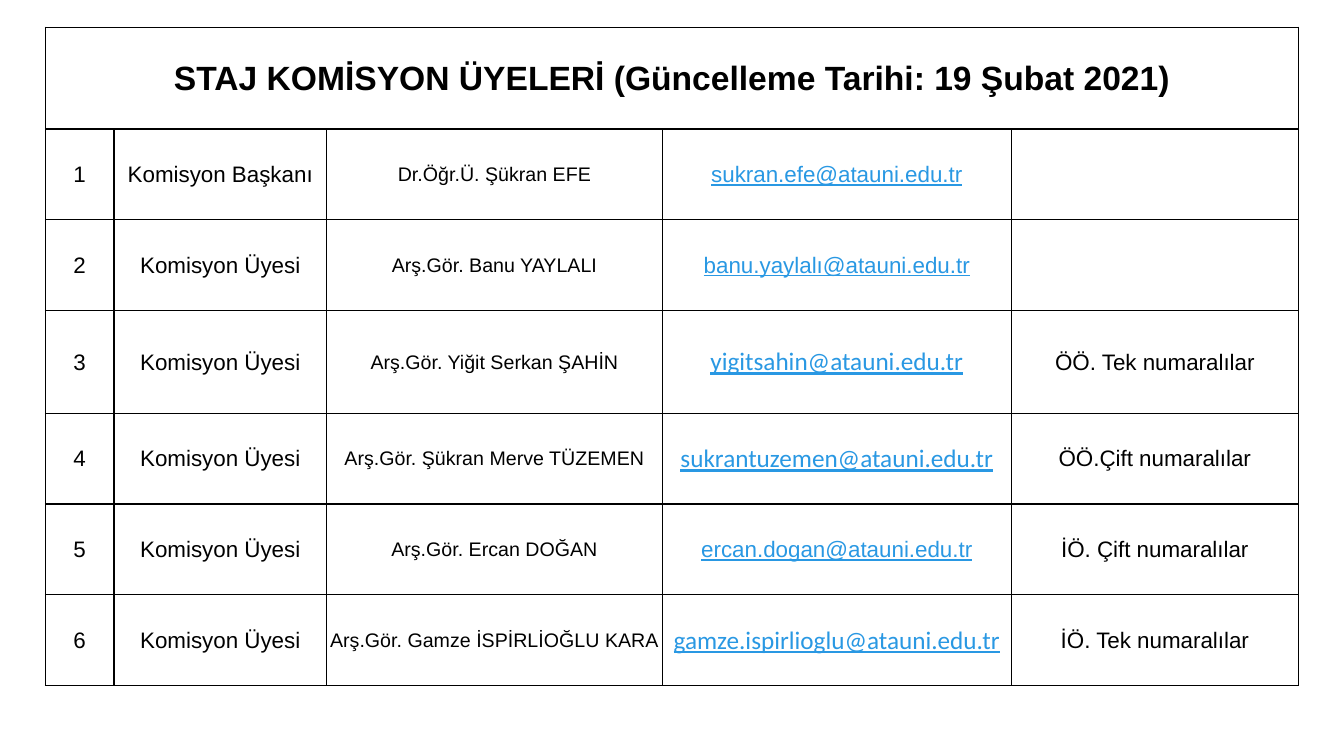
from lxml.etree import SubElement
from pptx import Presentation
from pptx.dml.color import RGBColor
from pptx.enum.text import MSO_ANCHOR, PP_ALIGN
from pptx.oxml.ns import qn
from pptx.util import Inches, Pt

BLACK, WHITE, LINK_BLUE = "000000", "FFFFFF", "2998E3"
COLUMN_WIDTHS = [0.68, 2.11, 3.33, 3.46, 2.85]
ROW_HEIGHTS = [1.01, 0.9, 0.9, 1.02, 0.9, 0.9, 0.9]
CELL_LAYOUT = {
    "vertical_anchor": MSO_ANCHOR.MIDDLE,
    "margin_left": Inches(0.01),
    "margin_top": Inches(0.01),
    "margin_right": Inches(0.01),
    "margin_bottom": Inches(0),
}

TITLE = "STAJ KOMİSYON ÜYELERİ (Güncelleme Tarihi: 19 Şubat 2021)"
TITLE_FORMAT = {"name": "Arial", "size": Pt(24), "bold": True}
BODY_FORMAT = {"name": "Arial", "size": Pt(16), "bold": False}
NAME_FORMAT = BODY_FORMAT | {"size": Pt(14)}
ARIAL_LINK = BODY_FORMAT | {"underline": True}
CALIBRI_LINK = ARIAL_LINK | {"name": "Calibri", "size": Pt(18)}

CHAIR, MEMBER = "Komisyon Başkanı", "Komisyon Üyesi"
MEMBERS = [
    (CHAIR, "Dr.Öğr.Ü. Şükran EFE", "sukran.efe@atauni.edu.tr", ARIAL_LINK, ""),
    (MEMBER, "Arş.Gör. Banu YAYLALI", "banu.yaylalı@atauni.edu.tr", ARIAL_LINK, ""),
    (MEMBER, "Arş.Gör. Yiğit Serkan ŞAHİN", "yigitsahin@atauni.edu.tr",
     CALIBRI_LINK, "ÖÖ. Tek numaralılar"),
    (MEMBER, "Arş.Gör. Şükran Merve TÜZEMEN", "sukrantuzemen@atauni.edu.tr",
     CALIBRI_LINK, "ÖÖ.Çift numaralılar"),
    (MEMBER, "Arş.Gör. Ercan DOĞAN", "ercan.dogan@atauni.edu.tr",
     ARIAL_LINK, "İÖ. Çift numaralılar"),
    (MEMBER, "Arş.Gör. Gamze İSPİRLİOĞLU KARA", "gamze.ispirlioglu@atauni.edu.tr",
     CALIBRI_LINK, "İÖ. Tek numaralılar"),
]


def color(hex_value):
    """Return the colour for a hex string."""
    return RGBColor.from_string(hex_value)


def apply_format(target, values):
    """Set each attribute in values on the target."""
    for attribute, value in values.items():
        setattr(target, attribute, value)


def add_borders(cell):
    """Draw a one-point black line on each side of a cell."""
    properties = cell._tc.get_or_add_tcPr()
    for side in ("a:lnL", "a:lnR", "a:lnT", "a:lnB"):
        line = SubElement(properties, qn(side), w=str(Pt(1)))
        line_fill = SubElement(line, qn("a:solidFill"))
        SubElement(line_fill, qn("a:srgbClr"), val=BLACK)


def style_cell(cell):
    """Give a cell its borders, white fill, margins and anchor."""
    add_borders(cell)
    cell.fill.solid()
    cell.fill.fore_color.rgb = color(WHITE)
    apply_format(cell, CELL_LAYOUT)


def write_cell(cell, wording, font_format, text_color=BLACK):
    """Write centred, formatted wording into a cell."""
    paragraph = cell.text_frame.paragraphs[0]
    paragraph.alignment = PP_ALIGN.CENTER
    if wording:
        run = paragraph.add_run()
        run.text = wording
        apply_format(run.font, font_format)
        run.font.color.rgb = color(text_color)


def add_commission_table(slide):
    """Add the empty, ruled table with a merged title row."""
    table = slide.shapes.add_table(
        len(ROW_HEIGHTS), len(COLUMN_WIDTHS), Inches(0.45), Inches(0.27),
        Inches(sum(COLUMN_WIDTHS)), Inches(sum(ROW_HEIGHTS))).table
    apply_format(table, {"first_row": False, "horz_banding": False})
    for column, width in zip(table.columns, COLUMN_WIDTHS):
        column.width = Inches(width)
    for row, height in zip(table.rows, ROW_HEIGHTS):
        row.height = Inches(height)
    for cell in table.iter_cells():
        style_cell(cell)
    table.cell(0, 0).merge(table.cell(0, len(COLUMN_WIDTHS) - 1))
    return table


def write_member(table, number, member):
    """Fill the row of one commission member."""
    role, name, email, link_format, students = member
    entries = [
        (str(number), BODY_FORMAT),
        (role, BODY_FORMAT),
        (name, NAME_FORMAT),
        (email, link_format, LINK_BLUE),
        (students, BODY_FORMAT),
    ]
    for column, entry in enumerate(entries):
        write_cell(table.cell(number, column), *entry)


def main():
    """Build and save the commission slide."""
    presentation = Presentation()
    apply_format(presentation,
                 {"slide_width": Inches(13.33), "slide_height": Inches(7.5)})
    slide = presentation.slides.add_slide(presentation.slide_layouts[6])
    table = add_commission_table(slide)
    write_cell(table.cell(0, 0), TITLE, TITLE_FORMAT)
    for number, member in enumerate(MEMBERS, start=1):
        write_member(table, number, member)
    presentation.save("out.pptx")


if __name__ == "__main__":
    main()
